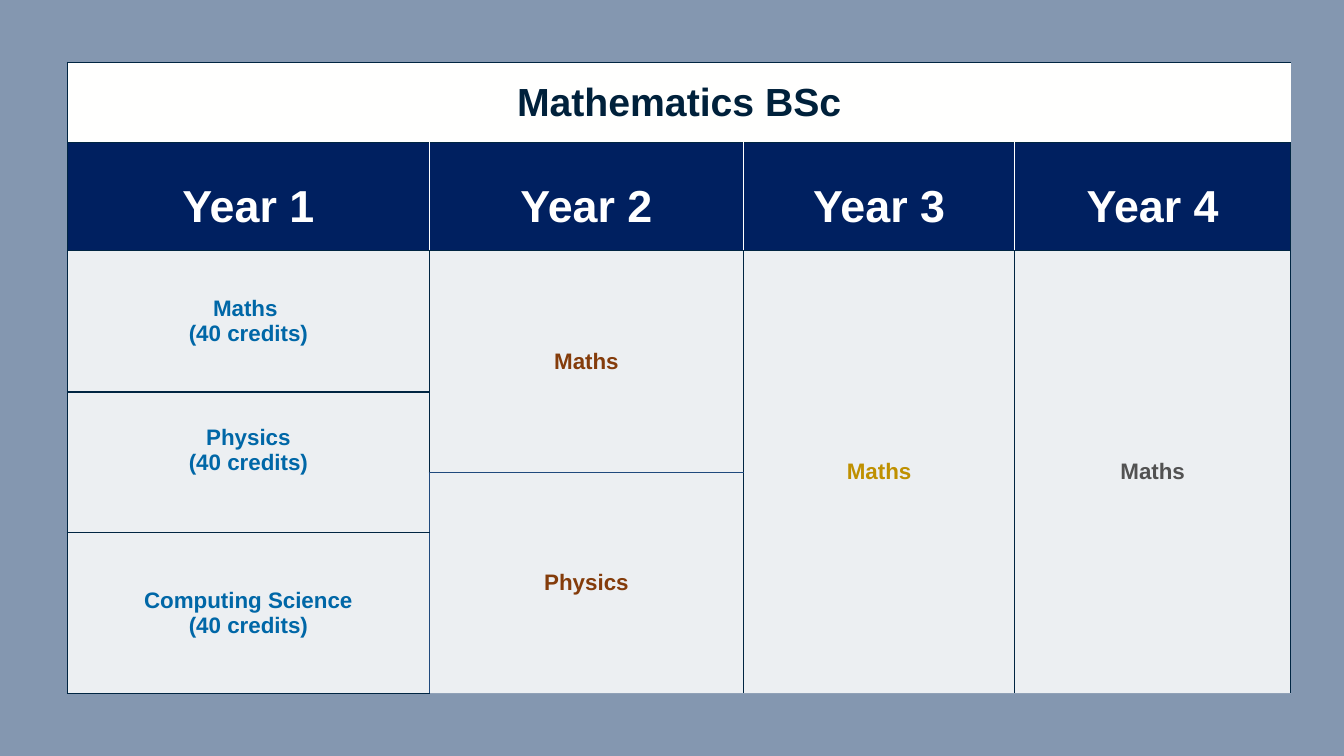
from itertools import product

from lxml import etree
from pptx import Presentation
from pptx.dml.color import RGBColor
from pptx.enum.text import MSO_ANCHOR, PP_ALIGN
from pptx.oxml.ns import qn
from pptx.util import Cm, Pt

MIDDLE = MSO_ANCHOR.MIDDLE
CENTER = PP_ALIGN.CENTER

SLATE = RGBColor(0x84, 0x97, 0xB0)
WHITE = RGBColor(0xFF, 0xFF, 0xFF)
PAPER = RGBColor(0xFF, 0xFF, 0xFE)
NAVY = RGBColor(0x00, 0x20, 0x60)
INK = RGBColor(0x00, 0x21, 0x3B)
EDGE = RGBColor(0x00, 0x25, 0x42)
STEEL = RGBColor(0x1F, 0x49, 0x7D)
BLUE = RGBColor(0x00, 0x67, 0xA7)
BROWN = RGBColor(0x84, 0x3C, 0x0B)
GOLD = RGBColor(0xBF, 0x90, 0x00)
GREY = RGBColor(0x52, 0x52, 0x52)

PLAIN = "{2D5ABB26-0587-4C30-8999-92F81FD0307C}"
COLS = (9.12, 7.92, 6.83, 6.96)
ROWS = (2.03, 2.72, 3.56, 2.03, 1.52, 4.04)
BOX = (1.7, 1.57, sum(COLS), sum(ROWS))
CELL = {
    "vertical_anchor": MIDDLE,
    "margin_left": Cm(0.3),
    "margin_right": Cm(0.3),
    "margin_top": Cm(0.15),
    "margin_bottom": Cm(0.15),
}
FONT = {"name": "Arial", "bold": True}
LIFT = {"margin_bottom": Cm(0.77)}

COURSES = (
    (2, 0, 1, "Maths \n(40 credits)", BLUE, {}, {}),
    (3, 0, 2, "Physics\n(40 credits)", BLUE, {"R": STEEL}, LIFT),
    (5, 0, 1, "Computing Science\n(40 credits)", BLUE, {"R": STEEL}, {}),
    (2, 1, 2, "Maths", BROWN, {"B": STEEL}, {}),
    (4, 1, 2, "Physics", BROWN, {"L": STEEL, "T": STEEL, "B": STEEL}, {}),
    (2, 2, 4, "Maths", GOLD, {}, {}),
    (2, 3, 4, "Maths", GREY, {}, {}),
)


def style(item, *specs):
    """Set attributes of an item from dicts of format values."""
    for spec in specs:
        for name, value in spec.items():
            setattr(item, name, value)


def paint(cell, color, alpha):
    """Fill a cell with a colour at a given percentage of opacity."""
    cell.fill.solid()
    cell.fill.fore_color.rgb = color
    if alpha < 100:
        tint = cell._tc.tcPr.find(".//" + qn("a:srgbClr"))
        etree.SubElement(tint, qn("a:alpha"), val=str(alpha * 1000))


def rule(cell, sides):
    """Draw cell borders from a dict of side letters and colours."""
    props = cell._tc.get_or_add_tcPr()
    order = [side for side in "LRTB" if side in sides]
    for place, side in enumerate(order):
        line = etree.Element(qn("a:ln" + side), w=str(Pt(1)))
        fill = etree.SubElement(line, qn("a:solidFill"))
        etree.SubElement(fill, qn("a:srgbClr"), val=str(sides[side]))
        props.insert(place, line)


def block(grid, row, col, high, wide, text, size, ink, fill, alpha=100,
          edges=None, space=1.0, extra=None):
    """Merge, fill, outline and label one block of grid cells."""
    last, end = row + high - 1, col + wide - 1
    head = grid.cell(row, col)
    if high * wide > 1:
        head.merge(grid.cell(last, end))
    tones = {**dict.fromkeys("LRTB", EDGE), **(edges or {})}
    for y, x in product(range(row, last + 1), range(col, end + 1)):
        part = grid.cell(y, x)
        outer = {"L": x == col, "R": x == end, "T": y == row, "B": y == last}
        paint(part, fill, alpha)
        rule(part, {side: tones[side] for side in tones if outer[side]})
    style(head, CELL, extra or {})
    head.text_frame.text = text
    for para in head.text_frame.paragraphs:
        style(para, {"alignment": CENTER, "line_spacing": space})
        for run in para.runs:
            style(run.font, FONT, {"size": Pt(size)})
            run.font.color.rgb = ink


def header(grid):
    """Fill the degree title and the row of years."""
    block(grid, 0, 0, 1, len(COLS), "Mathematics BSc", 28, INK, PAPER)
    final = len(COLS) - 1
    for col in range(len(COLS)):
        edges = {"L": PAPER if col else EDGE,
                 "R": PAPER if col < final else EDGE}
        block(grid, 1, col, 1, 1, f"Year {col + 1}", 32, WHITE, NAVY,
              edges=edges, space=1.4)


def body(grid):
    """Fill the course blocks below the years."""
    for row, col, high, text, ink, edges, extra in COURSES:
        block(grid, row, col, high, 1, text, 16, ink, PAPER, 85,
              edges, extra=extra)


def plan(slide, box):
    """Place the degree plan table in a box."""
    frame = slide.shapes.add_table(len(ROWS), len(COLS), *map(Cm, box))
    grid = frame.table
    style(grid, {"first_row": False, "horz_banding": False})
    grid._tbl.tblPr.find(qn("a:tableStyleId")).text = PLAIN
    for column, width in zip(grid.columns, COLS):
        column.width = Cm(width)
    for row, height in zip(grid.rows, ROWS):
        row.height = Cm(height)
    header(grid)
    body(grid)


def main():
    """Build and save the slide."""
    deck = Presentation()
    style(deck, {"slide_width": Cm(33.87), "slide_height": Cm(19.05)})
    slide = deck.slides.add_slide(deck.slide_layouts[6])
    slide.background.fill.solid()
    slide.background.fill.fore_color.rgb = SLATE
    plan(slide, BOX)
    deck.save("out.pptx")


if __name__ == "__main__":
    main()
